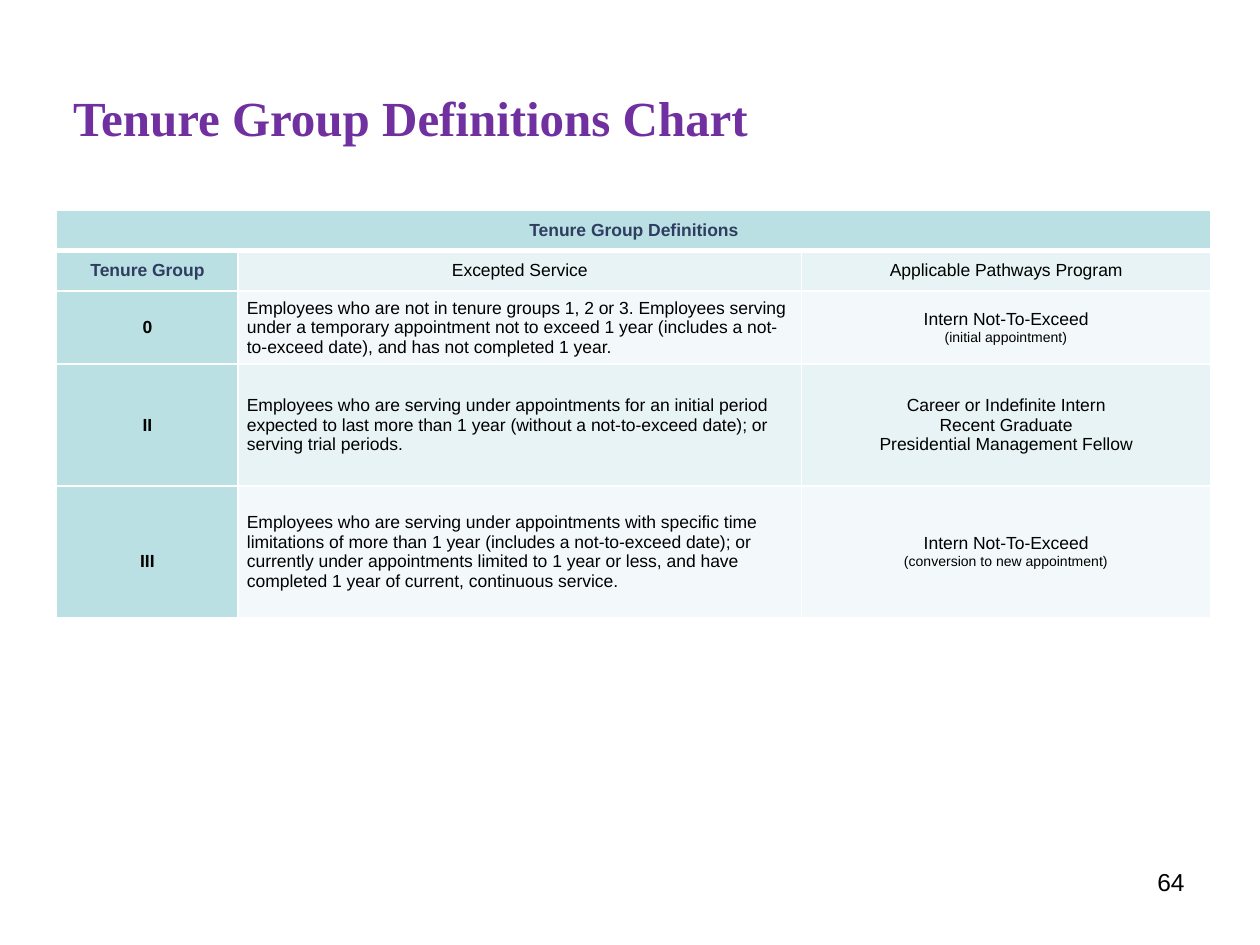
from lxml.etree import SubElement
from pptx import Presentation
from pptx.dml.color import RGBColor
from pptx.enum.text import MSO_ANCHOR, PP_ALIGN
from pptx.oxml.ns import qn
from pptx.util import Inches, Pt

PURPLE = RGBColor(0x70, 0x30, 0xA0)
NAVY = RGBColor(0x2E, 0x3D, 0x60)
BLACK = RGBColor(0, 0, 0)
WHITE = RGBColor(0xFF, 0xFF, 0xFF)
TEAL = RGBColor(0xBB, 0xE0, 0xE3)
BANDS = [RGBColor(0xE7, 0xF3, 0xF4), RGBColor(0xF3, 0xF9, 0xFA)]

COLUMN_WIDTHS = [1.44, 4.47, 3.25]
ROW_HEIGHTS = [0.32, 0.32, 0.58, 0.97, 1.04]
DEFINITIONS = [
    ["Tenure Group Definitions", "", ""],
    ["Tenure Group", "Excepted Service", "Applicable Pathways Program"],
    ["0",
     "Employees who are not in tenure groups 1, 2 or 3. Employees serving under a "
     "temporary appointment not to exceed 1 year (includes a not-to-exceed date), "
     "and has not completed 1 year.",
     "Intern Not-To-Exceed\n(initial appointment)"],
    ["II",
     "Employees who are serving under appointments for an initial period expected to "
     "last more than 1 year (without a not-to-exceed date); or serving trial periods.",
     "Career or Indefinite Intern\nRecent Graduate\nPresidential Management Fellow"],
    ["III",
     "Employees who are serving under appointments with specific time limitations of "
     "more than 1 year (includes a not-to-exceed date); or currently under appointments "
     "limited to 1 year or less, and have completed 1 year of current, continuous service.",
     "Intern Not-To-Exceed\n(conversion to new appointment)"],
]


def set_borders(cell, bottom_width):
    """Draw white borders, 1 pt except for the bottom one; call before filling."""
    properties = cell._tc.get_or_add_tcPr()
    for side, width in [("L", 1), ("R", 1), ("T", 1), ("B", bottom_width)]:
        line = SubElement(properties, qn(f"a:ln{side}"), w=str(Pt(width)))
        fill = SubElement(line, qn("a:solidFill"))
        SubElement(fill, qn("a:srgbClr"), val=str(WHITE))


presentation = Presentation()
presentation.slide_width = Inches(10)
presentation.slide_height = Inches(7.5)
slide = presentation.slides.add_slide(presentation.slide_layouts[5])

# Title
title = slide.shapes.title
title.left, title.top = Inches(0.58), Inches(0.63)
title.width, title.height = Inches(9), Inches(0.53)
title_frame = title.text_frame
title_frame.text = "Tenure Group Definitions Chart"
title_frame.vertical_anchor = MSO_ANCHOR.BOTTOM
title_frame.margin_left = title_frame.margin_right = 0
title_frame.margin_top = title_frame.margin_bottom = 0
heading = title_frame.paragraphs[0]
heading.alignment = PP_ALIGN.LEFT
heading.line_spacing = Pt(33)
heading.font.name = "Times New Roman"
heading.font.size = Pt(28)
heading.font.bold = True
heading.font.color.rgb = PURPLE

# Definitions table
definitions = slide.shapes.add_table(
    len(ROW_HEIGHTS), len(COLUMN_WIDTHS), Inches(0.45), Inches(1.67),
    Inches(sum(COLUMN_WIDTHS)), Inches(sum(ROW_HEIGHTS))).table
for column, width in zip(definitions.columns, COLUMN_WIDTHS):
    column.width = Inches(width)
for row, height in zip(definitions.rows, ROW_HEIGHTS):
    row.height = Inches(height)
definitions.cell(0, 0).merge(definitions.cell(0, 2))

for r, texts in enumerate(DEFINITIONS):
    for c, text in enumerate(texts):
        cell = definitions.cell(r, c)
        is_heading = r == 0 or c == 0
        set_borders(cell, 3 if r == 0 else 1)
        cell.fill.solid()
        cell.fill.fore_color.rgb = TEAL if is_heading else BANDS[(r - 1) % 2]
        cell.vertical_anchor = MSO_ANCHOR.MIDDLE
        cell.margin_left = cell.margin_right = Inches(0.07)
        cell.margin_top = cell.margin_bottom = 0
        cell.text = text
        for paragraph in cell.text_frame.paragraphs:
            is_definition = r > 1 and c == 1
            paragraph.alignment = PP_ALIGN.LEFT if is_definition else PP_ALIGN.CENTER
            paragraph.font.name = "Arial"
            paragraph.font.size = Pt(8 if paragraph.text.startswith("(") else 10)
            paragraph.font.bold = is_heading
            paragraph.font.color.rgb = NAVY if is_heading and r < 2 else BLACK

# Group III sits one text line below the others
definitions.cell(4, 0).margin_top = Inches(0.16)

# Page number
page_number = slide.shapes.add_textbox(
    Inches(7.17), Inches(6.83), Inches(2.33), Inches(0.52)).text_frame
page_number.word_wrap = True
page_number.text = "64"
number = page_number.paragraphs[0]
number.alignment = PP_ALIGN.RIGHT
number.font.name = "Arial"
number.font.size = Pt(14)
number.font.color.rgb = BLACK

presentation.save("out.pptx")
